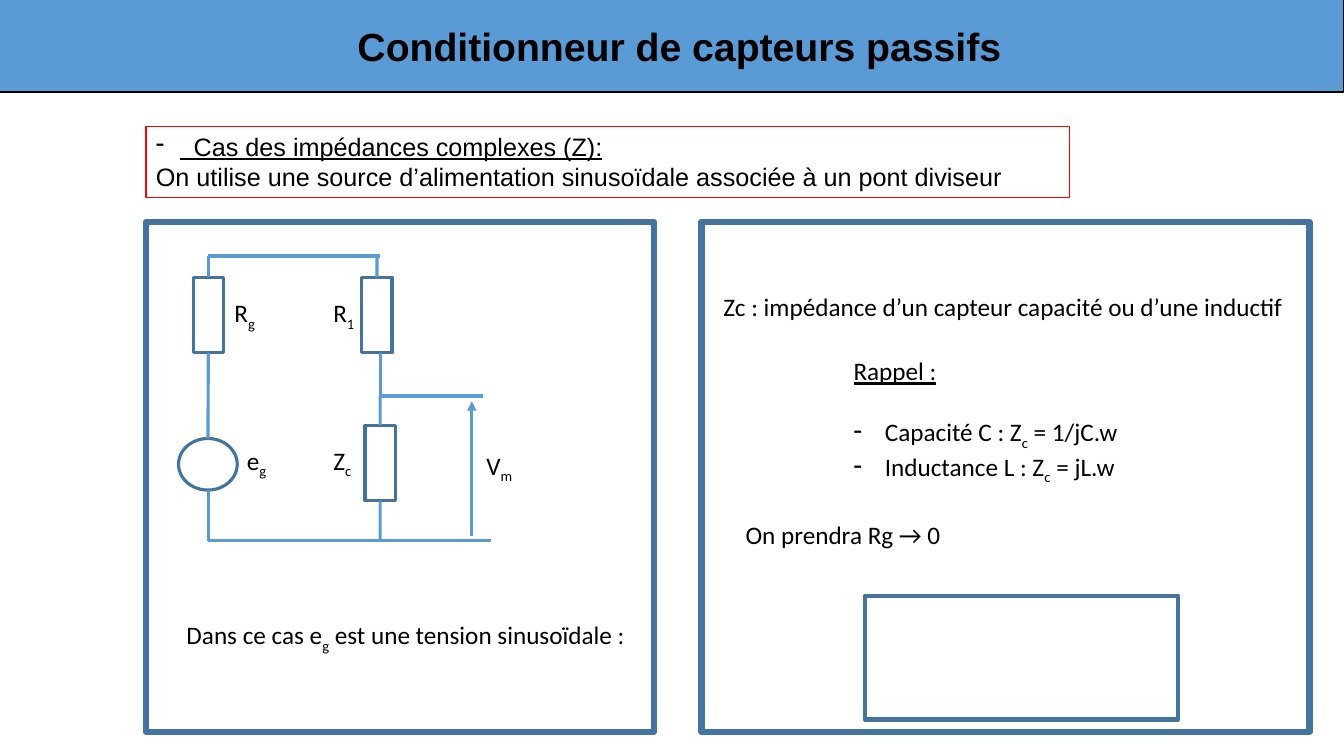
import pptx
import pptx.dml.color
import pptx.enum.shapes
import pptx.enum.text
import pptx.oxml.ns
import pptx.util
from lxml import etree

Cm = pptx.util.Cm
Pt = pptx.util.Pt
PRESET = pptx.enum.shapes.MSO_SHAPE

COLOURS = {
    "text": "000000",
    "banner": "5B9BD5",
    "wire": "5B9BD5",
    "outline": "43739E",
    "alert": "FF0000",
    "white": "FFFFFF",
}
WIRE_WIDTH = 2.25
LABEL_HEIGHT = 1.02


def rgb(name):
    return pptx.dml.color.RGBColor.from_string(COLOURS[name])


def add_child(parent, tag, **attributes):
    return etree.SubElement(parent, pptx.oxml.ns.qn(tag), attributes)


def add_box(shapes, left, top, width, height, line="outline",
            line_width=WIRE_WIDTH, fill=None, preset=PRESET.RECTANGLE):
    shape = shapes.add_shape(preset, Cm(left), Cm(top), Cm(width), Cm(height))
    shape.shadow.inherit = False
    if fill:
        shape.fill.solid()
        shape.fill.fore_color.rgb = rgb(fill)
    else:
        shape.fill.background()
    shape.line.color.rgb = rgb(line)
    shape.line.width = Pt(line_width)
    return shape


def add_wire(shapes, start, end, begin=None, finish=None, arrow=False):
    """Draw a straight line; begin and finish are (shape, side) joints."""
    wire = shapes.add_connector(
        pptx.enum.shapes.MSO_CONNECTOR.STRAIGHT,
        Cm(start[0]), Cm(start[1]), Cm(end[0]), Cm(end[1]))
    wire.line.color.rgb = rgb("wire")
    wire.line.width = Pt(WIRE_WIDTH)
    if arrow:
        add_child(wire.line._get_or_add_ln(), "a:tailEnd", type="triangle")
    add_child(wire._element.spPr, "a:effectLst")
    if begin:
        wire.begin_connect(*begin)
    if finish:
        wire.end_connect(*finish)


def write(shape, text, size=18, font="Calibri", bold=False, underline=False,
          dash_indent=None, space_before=0):
    """Add one paragraph; text between tildes is set as a subscript."""
    frame = shape.text_frame
    paragraph = frame.paragraphs[-1]
    if paragraph.runs:
        paragraph = frame.add_paragraph()
    paragraph.alignment = pptx.enum.text.PP_ALIGN.LEFT
    paragraph.space_before = Pt(space_before)
    if dash_indent:
        properties = paragraph._p.get_or_add_pPr()
        properties.set("marL", str(Cm(dash_indent)))
        properties.set("indent", str(-Cm(dash_indent)))
        add_child(properties, "a:buFontTx")
        add_child(properties, "a:buChar", char="-")
    for index, part in enumerate(text.split("~")):
        run = paragraph.add_run()
        run.text = part
        run.font.name = font
        run.font.size = Pt(size)
        run.font.bold = bold
        run.font.underline = underline
        run.font.color.rgb = rgb("text")
        if index % 2:
            run.font._element.set("baseline", "-25000")


def add_text_box(shapes, left, top, width, height=LABEL_HEIGHT):
    box = shapes.add_textbox(Cm(left), Cm(top), Cm(width), Cm(height))
    box.text_frame.word_wrap = False
    box.text_frame.auto_size = pptx.enum.text.MSO_AUTO_SIZE.SHAPE_TO_FIT_TEXT
    return box


def add_banner(shapes):
    add_box(shapes, 0, 0, 33.87, 2.32, line="text", line_width=0.75, fill="banner")
    title = add_text_box(shapes, 8.76, 0.44, 16.95, 1.45)
    write(title, "Conditionneur de capteurs passifs", size=28, font="Arial", bold=True)


def add_introduction(shapes):
    box = add_box(shapes, 3.68, 3.18, 23.27, 1.8, line="alert", line_width=0.75)
    box.text_frame.word_wrap = True
    box.text_frame.vertical_anchor = pptx.enum.text.MSO_ANCHOR.TOP
    write(box, "  Cas des impédances complexes (Z):", font="Arial",
          underline=True, dash_indent=0.6)
    write(box, "On utilise une source d’alimentation sinusoïdale associée "
          "à un pont diviseur", font="Arial")


def add_circuit(shapes):
    circuit = shapes.add_group_shape().shapes
    source_x, r1_x, bridge_x, arrow_x = 5.25, 9.5, 9.58, 11.89
    top_y, middle_y, bottom_y = 6.45, 9.98, 13.62

    generator = add_box(circuit, 4.5, 11.05, 1.48, 1.3, preset=PRESET.OVAL)
    rg, r1, zc = [
        add_box(circuit, x - 0.38, y, 0.76, 1.9, fill="white")
        for x, y in ((source_x, 6.99), (r1_x, 6.99), (bridge_x, 10.72))]

    add_wire(circuit, (source_x, 8.89), (source_x, 11.05), (rg, 2), (generator, 0))
    add_wire(circuit, (source_x, 12.35), (source_x, bottom_y))
    add_wire(circuit, (source_x, top_y), (bridge_x, top_y))
    add_wire(circuit, (source_x, 6.99), (source_x, top_y), begin=(rg, 0))
    add_wire(circuit, (r1_x, 6.99), (r1_x, top_y), begin=(r1, 0))
    add_wire(circuit, (bridge_x, 8.89), (bridge_x, middle_y))
    add_wire(circuit, (bridge_x, middle_y), (bridge_x, 10.72), finish=(zc, 0))
    add_wire(circuit, (bridge_x, 12.62), (bridge_x, bottom_y), begin=(zc, 2))
    add_wire(circuit, (source_x, bottom_y), (bridge_x, bottom_y))
    add_wire(circuit, (bridge_x, middle_y), (12.17, middle_y))
    add_wire(circuit, (bridge_x, bottom_y), (12.37, bottom_y))
    add_wire(circuit, (arrow_x, 13.51), (arrow_x, 10.11), arrow=True)

    for text, left, top, width in (
            ("R~g~", 5.66, 7.38, 1.07), ("R~1~", 8.15, 7.38, 1.07),
            ("e~g~", 5.97, 11.09, 1.04), ("Z~c~", 8.15, 11.09, 0.99),
            ("V~m~", 12.01, 11.22, 1.19)):
        write(add_text_box(circuit, left, top, width), text)


def add_explanations(shapes):
    for text, left, top, width in (
            ("Zc : impédance d’un capteur capacité ou d’une inductif", 17.98, 7.21, 14.81),
            ("On prendra Rg → 0", 18.54, 12.95, 5.54),
            ("Dans ce cas e~g~ est une tension sinusoïdale :", 4.45, 15.49, 12.01)):
        write(add_text_box(shapes, left, top, width), text)

    reminder = add_text_box(shapes, 21.26, 8.84, 7.34, 3.33)
    write(reminder, "Rappel :", underline=True)
    write(reminder, "Capacité C : Z~c~ = 1/jC.w", dash_indent=0.79, space_before=22)
    write(reminder, "Inductance L : Z~c~ = jL.w", dash_indent=0.79)


def add_panels(shapes):
    add_box(shapes, 21.79, 15.01, 7.9, 3.12, line_width=3)
    for left, width in ((3.68, 12.8), (17.68, 15.32)):
        add_box(shapes, left, 5.59, width, 12.85, line_width=4.5)


def main():
    presentation = pptx.Presentation()
    presentation.slide_width = Cm(33.87)
    presentation.slide_height = Cm(19.05)
    slide = presentation.slides.add_slide(presentation.slide_layouts[6])
    add_introduction(slide.shapes)
    add_banner(slide.shapes)
    add_explanations(slide.shapes)
    add_circuit(slide.shapes)
    add_panels(slide.shapes)
    presentation.save("out.pptx")


if __name__ == "__main__":
    main()
